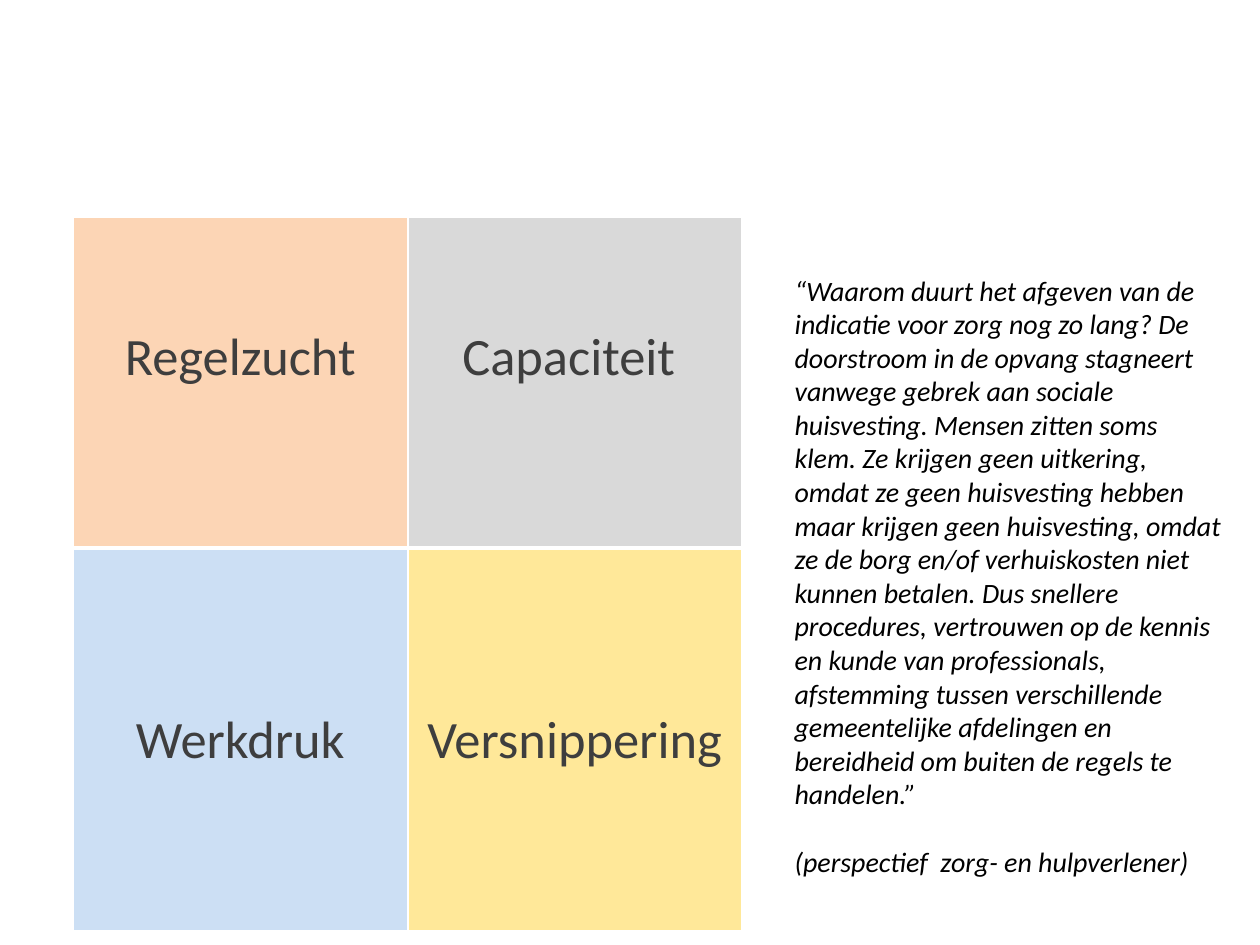
from lxml import etree
from pptx import Presentation
from pptx import util as u
from pptx.dml.color import RGBColor
from pptx.enum import text
from pptx.oxml.ns import qn

COLOURS = {
    "peach": "FCD5B5",
    "grey": "D9D9D9",
    "blue": "CCDFF4",
    "yellow": "FFE899",
    "label": "3E3E3E",
    "quote": "000000",
    "border": "FFFFFF",
}
FONT = "Calibri"

# Each row: height, space above the labels, line below (pt), cells
THEMES = [
    (u.Cm(6.68), u.Cm(2.19), 3, [("Regelzucht", "peach"), ("Capaciteit ", "grey")]),
    (u.Cm(7.72), u.Cm(3.23), 1, [("Werkdruk", "blue"), ("Versnippering", "yellow")]),
]
QUOTE = (
    "“Waarom duurt het afgeven van de indicatie voor zorg nog zo lang? "
    "De doorstroom in de opvang stagneert vanwege gebrek aan sociale huisvesting. "
    "Mensen zitten soms klem. Ze krijgen geen uitkering, omdat ze geen huisvesting "
    "hebben maar krijgen geen huisvesting, omdat ze de borg en/of verhuiskosten niet "
    "kunnen betalen. Dus snellere procedures, vertrouwen op de kennis en kunde van "
    "professionals, afstemming tussen verschillende gemeentelijke afdelingen en "
    "bereidheid om buiten de regels te handelen.”"
)
SPEAKER = "(perspectief  zorg- en hulpverlener)"


def add_span(para, words, size, colour, italic=False):
    span = para.add_run()
    span.text = words
    span.font.name = FONT
    span.font.size = u.Pt(size)
    span.font.italic = italic
    span.font.color.rgb = RGBColor.from_string(COLOURS[colour])


def set_borders(cell, bottom):
    """Draw the cell's edges; only the bottom one varies in width."""
    properties = cell._tc.get_or_add_tcPr()
    for index, (side, width) in enumerate(zip("LRTB", (1, 1, 1, bottom))):
        line = etree.Element(qn(f"a:ln{side}"), w=str(u.Pt(width)))
        fill = etree.SubElement(line, qn("a:solidFill"))
        etree.SubElement(fill, qn("a:srgbClr"), val=COLOURS["border"])
        properties.insert(index, line)


def fill_cell(cell, label, colour, space_above, bottom):
    cell.fill.solid()
    cell.fill.fore_color.rgb = RGBColor.from_string(COLOURS[colour])
    cell.margin_top = space_above
    set_borders(cell, bottom)
    para = cell.text_frame.paragraphs[0]
    para.alignment = text.PP_ALIGN.CENTER
    add_span(para, label, 30, "label")


def add_theme_table(page):
    widths = (u.Cm(6.75), u.Cm(6.73))
    height = sum(theme[0] for theme in THEMES)
    table = page.shapes.add_table(
        len(THEMES), len(widths), u.Cm(1.47), u.Cm(4.37), sum(widths), height
    ).table
    table.first_row = table.horz_banding = False
    for column, width in zip(table.columns, widths):
        column.width = width
    for row, (height, space_above, bottom, cells) in zip(table.rows, THEMES):
        row.height = height
        for cell, (label, colour) in zip(row.cells, cells):
            fill_cell(cell, label, colour, space_above, bottom)


def add_quote(page):
    box = page.shapes.add_textbox(u.Cm(15.77), u.Cm(5.38), u.Cm(9.15), u.Cm(11.89))
    frame = box.text_frame
    frame.word_wrap = True
    add_span(frame.paragraphs[0], QUOTE, 16, "quote", italic=True)
    para = frame.add_paragraph()
    para.space_before = u.Pt(19.5)
    add_span(para, SPEAKER, 16, "quote", italic=True)


def main():
    deck = Presentation()
    deck.slide_width, deck.slide_height = u.Cm(25.4), u.Cm(19.05)
    page = deck.slides.add_slide(deck.slide_layouts[6])

    # Four themes on the left, quotation on the right
    add_theme_table(page)
    add_quote(page)

    deck.save("out.pptx")


if __name__ == "__main__":
    main()
